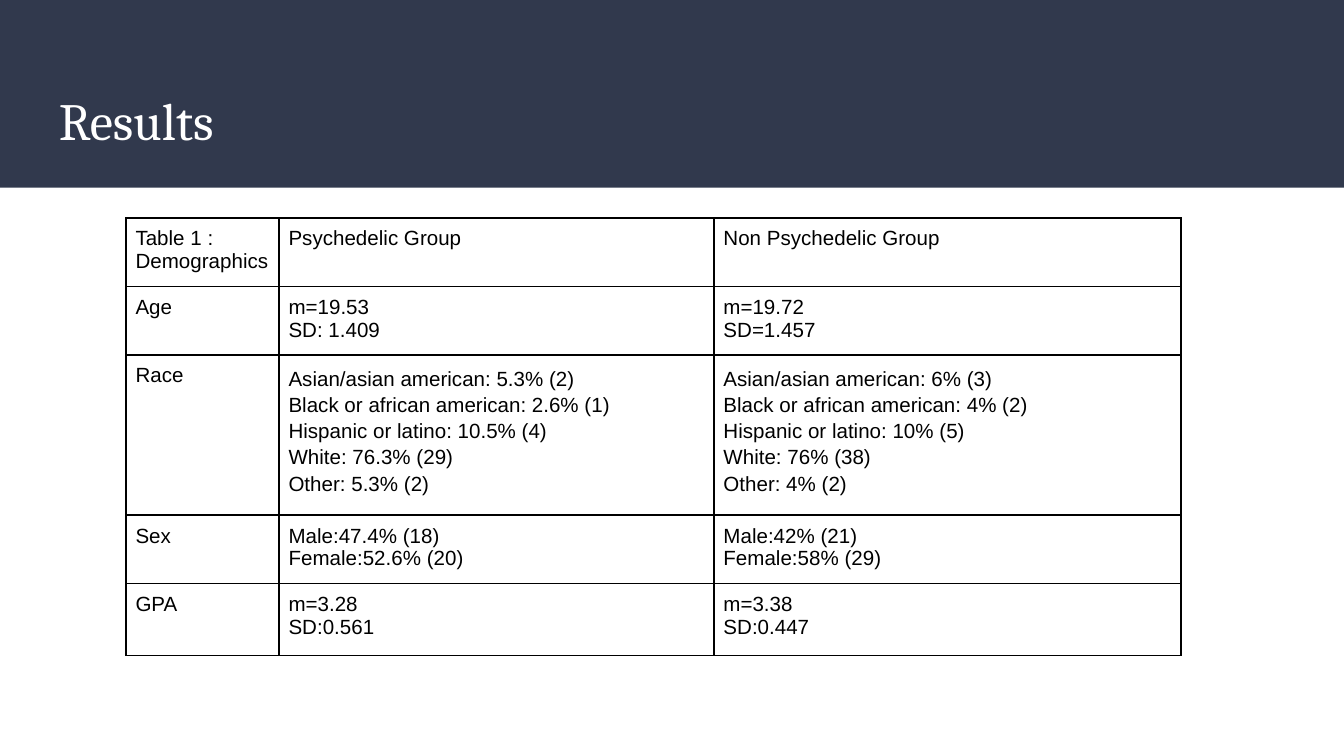
from lxml.etree import SubElement
from pptx import Presentation
from pptx.dml.color import RGBColor
from pptx.enum.shapes import MSO_SHAPE
from pptx.enum.text import MSO_ANCHOR
from pptx.oxml.ns import qn
from pptx.util import Pt

NAVY = RGBColor(0x31, 0x39, 0x4D)
WHITE = RGBColor(0xFF, 0xFF, 0xFF)
BLACK = RGBColor(0, 0, 0)

TITLE = "Results"
DEMOGRAPHICS = [
    ("Table 1 :\nDemographics", "Psychedelic Group", "Non Psychedelic Group"),
    ("Age", "m=19.53\nSD: 1.409", "m=19.72\nSD=1.457"),
    (
        "Race",
        "Asian/asian american: 5.3% (2)\nBlack or african american: 2.6% (1)\n"
        "Hispanic or latino: 10.5% (4)\nWhite: 76.3% (29)\nOther: 5.3% (2)",
        "Asian/asian american: 6% (3)\nBlack or african american: 4% (2)\n"
        "Hispanic or latino: 10% (5)\nWhite: 76% (38)\nOther: 4% (2)",
    ),
    ("Sex", "Male:47.4% (18)\nFemale:52.6% (20)", "Male:42% (21)\nFemale:58% (29)"),
    ("GPA", "m=3.28\nSD:0.561", "m=3.38\nSD:0.447"),
]
COLUMN_WIDTHS = (82, 233, 250)
ROW_HEIGHTS = (36.7, 36.7, 80.4, 36.7, 38.5)
LIST_ROW = 2
CELL_MARGIN = Pt(5)


def set_margins(holder, margin):
    holder.margin_left = holder.margin_right = margin
    holder.margin_top = holder.margin_bottom = margin


def style_font(font, name, size, color):
    font.name, font.size = name, Pt(size)
    font.color.rgb = color


def add_borders(cell):
    properties = cell._tc.get_or_add_tcPr()
    for position, side in enumerate(("a:lnL", "a:lnR", "a:lnT", "a:lnB")):
        line = properties.makeelement(qn(side), {"w": str(Pt(1))})
        fill = SubElement(line, qn("a:solidFill"))
        SubElement(fill, qn("a:srgbClr"), val=str(BLACK))
        properties.insert(position, line)


def add_header(slide, width):
    band = slide.shapes.add_shape(MSO_SHAPE.RECTANGLE, 0, 0, width, Pt(100.5))
    band.shadow.inherit = False
    band.fill.solid()
    band.fill.fore_color.rgb = NAVY
    band.line.fill.background()

    title = slide.shapes.add_textbox(Pt(24.5), Pt(39.6), Pt(671), Pt(49)).text_frame
    title.word_wrap = True
    title.vertical_anchor = MSO_ANCHOR.MIDDLE
    set_margins(title, Pt(7.2))
    title.text = TITLE
    style_font(title.paragraphs[0].font, "Cambria", 28, WHITE)


def add_demographics(slide):
    table = slide.shapes.add_table(
        len(DEMOGRAPHICS), len(COLUMN_WIDTHS), Pt(67.6), Pt(116.8),
        Pt(sum(COLUMN_WIDTHS)), Pt(sum(ROW_HEIGHTS)),
    ).table
    table.first_row = table.horz_banding = False
    for column, width in zip(table.columns, COLUMN_WIDTHS):
        column.width = Pt(width)
    for r, (row, height) in enumerate(zip(table.rows, ROW_HEIGHTS)):
        row.height = Pt(height)
        for c, (cell, text) in enumerate(zip(row.cells, DEMOGRAPHICS[r])):
            cell.text = text
            cell.fill.background()
            set_margins(cell, CELL_MARGIN)
            add_borders(cell)
            for paragraph in cell.text_frame.paragraphs:
                style_font(paragraph.font, "Arial", 11, BLACK)
                if r == LIST_ROW and c > 0:
                    paragraph.line_spacing = 1.15


def main():
    deck = Presentation()
    deck.slide_width, deck.slide_height = Pt(720), Pt(405)
    slide = deck.slides.add_slide(deck.slide_layouts[6])
    add_header(slide, deck.slide_width)
    add_demographics(slide)
    deck.save("out.pptx")


if __name__ == "__main__":
    main()
